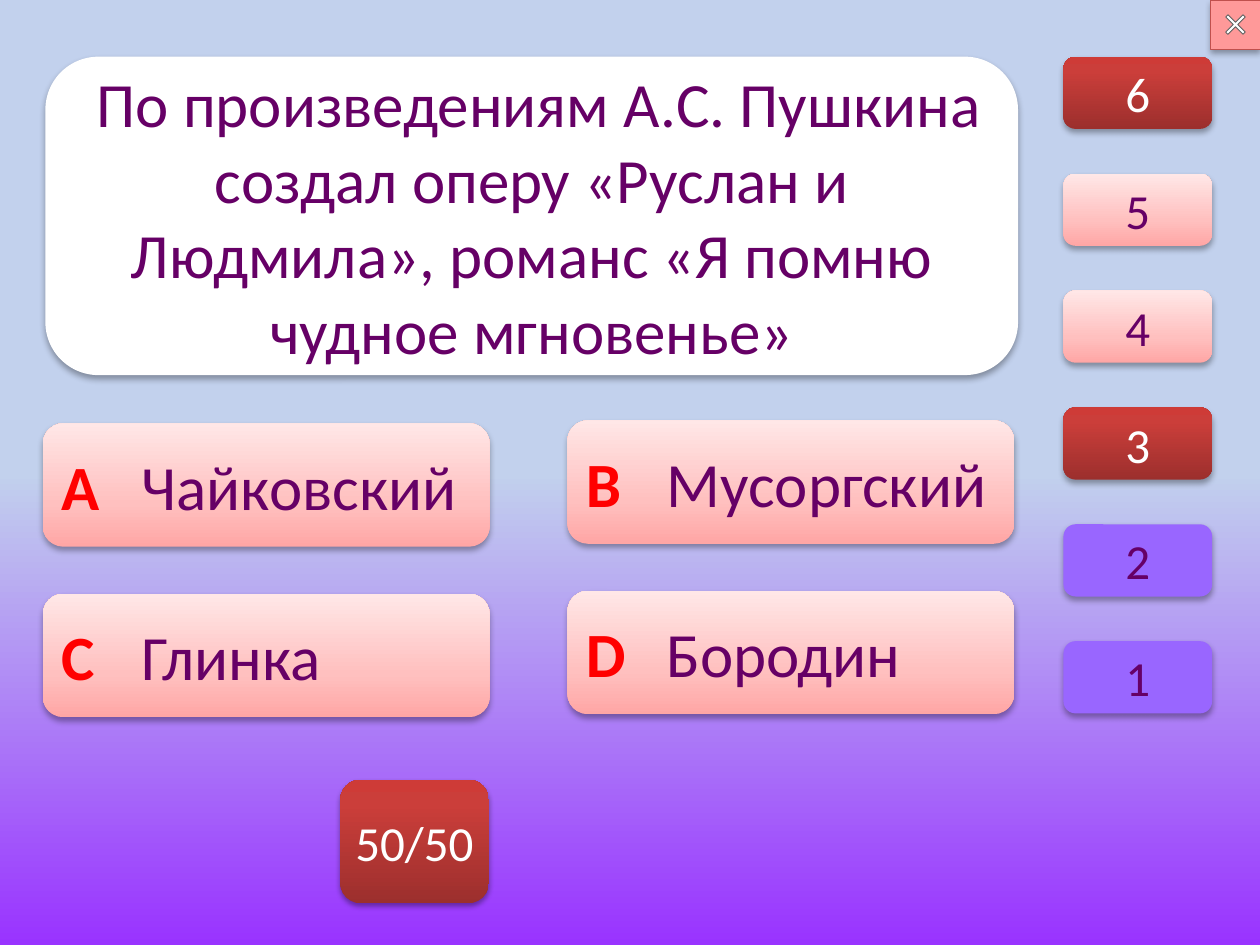
from collections import namedtuple

from lxml import etree
from pptx import Presentation
from pptx.dml.color import RGBColor
from pptx.enum.shapes import MSO_SHAPE
from pptx.enum.text import MSO_ANCHOR, PP_ALIGN
from pptx.oxml.ns import qn
from pptx.util import Inches, Pt

ROUNDED = MSO_SHAPE.ROUNDED_RECTANGLE
BUTTON = MSO_SHAPE.ACTION_BUTTON_CUSTOM
CROSS = MSO_SHAPE.CROSS
LEFT = PP_ALIGN.LEFT
CENTER = PP_ALIGN.CENTER
MIDDLE = MSO_ANCHOR.MIDDLE

WIDTH, HEIGHT = Inches(10), Inches(7.5)
FONT = "Calibri"
PURPLE, LETTER_RED, WHITE = "660066", "FF0000", "FFFFFF"
VIOLET = "9966FF"
PINK = [(0, "FFA6A5"), (35, "FFC0BF"), (100, "FFE7E7")]
RED = [(0, "9C2F2D"), (80, "CB3E3A"), (100, "CE3B37")]
SKY = [(0, "9933FF"), (50, "C2D1ED")]
SOFT_SHADOW = (32, 3.5, 2.2)
TIGHT_SHADOW = (35, 3.1, 1.8)

Box = namedtuple("Box", "left top width height")


def share(box, left, top, width, height):
    return Box(box.left + left * box.width, box.top + top * box.height,
               width * box.width, height * box.height)


def color(value):
    return RGBColor.from_string(value)


def child(parent, tag, **attributes):
    element = etree.SubElement(parent, qn(tag))
    for name, value in attributes.items():
        element.set(name, str(value))
    return element


def paint_gradient(fill, owner, stops):
    fill.gradient()
    fill.gradient_angle = 90
    stop_list = next(owner.iter(qn("a:gsLst")))
    for stop in list(stop_list):
        stop_list.remove(stop)
    for position, value in stops:
        stop = child(stop_list, "a:gs", pos=position * 1000)
        child(stop, "a:srgbClr", val=value)


def cast_shadow(shape, opacity, blur, distance):
    effects = shape._element.spPr.find(qn("a:effectLst"))
    shadow = child(effects, "a:outerShdw", blurRad=int(Pt(blur)), dist=int(Pt(distance)),
                   dir=90 * 60000, rotWithShape=0)
    child(child(shadow, "a:srgbClr", val="000000"), "a:alpha", val=opacity * 1000)


def add_panel(slide, kind, box, fill=None, line=None, shadow=None):
    shape = slide.shapes.add_shape(kind, *(round(length) for length in box))
    if fill is None:
        shape.fill.background()
    elif isinstance(fill, list):
        paint_gradient(shape.fill, shape._element, fill)
    else:
        shape.fill.solid()
        shape.fill.fore_color.rgb = color(fill)
    if line:
        shape.line.color.rgb = color(line)
        shape.line.width = Pt(0.5)
    else:
        shape.line.fill.background()
    shape.shadow.inherit = False
    if shadow:
        cast_shadow(shape, *shadow)
    return shape


def write(shape, runs, size, alignment=CENTER, wrap=False, tab=None):
    frame = shape.text_frame
    frame.word_wrap = wrap
    frame.vertical_anchor = MIDDLE
    paragraph = frame.paragraphs[0]
    paragraph.alignment = alignment
    if tab:
        tabs = child(paragraph._p.get_or_add_pPr(), "a:tabLst")
        child(tabs, "a:tab", pos=int(tab), algn="l")
    for text, value, bold in runs:
        run = paragraph.add_run()
        run.text = text
        run.font.name = FONT
        run.font.size = Pt(size)
        run.font.bold = bold
        run.font.color.rgb = color(value)


def add_close_button(slide, box):
    add_panel(slide, BUTTON, box, "FF9999", shadow=SOFT_SHADOW)
    cross = add_panel(slide, CROSS, share(box, 0.25, 0.25, 0.5, 0.5), WHITE, "5F5F5F")
    cross.adjustments[0] = 0.435
    cross.rotation = 45
    add_panel(slide, BUTTON, box, line="C0504D")


def add_question(slide, box, question):
    panel = add_panel(slide, ROUNDED, box, WHITE, shadow=SOFT_SHADOW)
    write(panel, [(question, PURPLE, False)], 36, wrap=True)


def add_answers(slide, box, answers):
    cell_width, cell_height, lift = 0.46, 0.42, 0.01
    for index, (letter, name) in enumerate(answers):
        row, column = divmod(index, 2)
        cell = share(box, column * (1 - cell_width),
                     row * (1 - cell_height) - column * lift, cell_width, cell_height)
        panel = add_panel(slide, ROUNDED, cell, PINK, shadow=SOFT_SHADOW)
        runs = [(letter + "\t", LETTER_RED, True), (name, PURPLE, False)]
        write(panel, runs, 36, LEFT, True, cell.width * 0.18)


def add_ladder(slide, box, levels):
    step_height = 0.11
    pitch = (1 - step_height) / (len(levels) - 1)
    for index, (label, fill, text_color) in enumerate(levels):
        step = share(box, 0, index * pitch, 1, step_height)
        panel = add_panel(slide, ROUNDED, step, fill, shadow=SOFT_SHADOW)
        write(panel, [(label, text_color, False)], 28)


def add_hint(slide, box, label):
    panel = add_panel(slide, ROUNDED, box, RED, shadow=TIGHT_SHADOW)
    write(panel, [(label, WHITE, False)], 28)


def main():
    presentation = Presentation()
    presentation.slide_width, presentation.slide_height = WIDTH, HEIGHT
    slide = presentation.slides.add_slide(presentation.slide_layouts[6])
    paint_gradient(slide.background.fill, slide.element, SKY)
    page = Box(0, 0, WIDTH, HEIGHT)

    add_close_button(slide, share(page, 0.961, 0, 0.039, 0.052))
    add_question(slide, share(page, 0.036, 0.06, 0.772, 0.337),
                 " По произведениям А.С. Пушкина создал оперу «Руслан и Людмила», "
                 "романс «Я помню чудное мгновенье»")
    add_answers(slide, share(page, 0.034, 0.448, 0.771, 0.311),
                [("А", "Чайковский"), ("В", "Мусоргский"),
                 ("C", "Глинка"), ("D", "Бородин")])
    add_hint(slide, share(page, 0.27, 0.825, 0.118, 0.131), "50/50")
    add_ladder(slide, share(page, 0.844, 0.06, 0.118, 0.695),
               [("6", RED, WHITE), ("5", PINK, PURPLE), ("4", PINK, PURPLE),
                ("3", RED, WHITE), ("2", VIOLET, PURPLE), ("1", VIOLET, PURPLE)])
    presentation.save("out.pptx")


if __name__ == "__main__":
    main()
